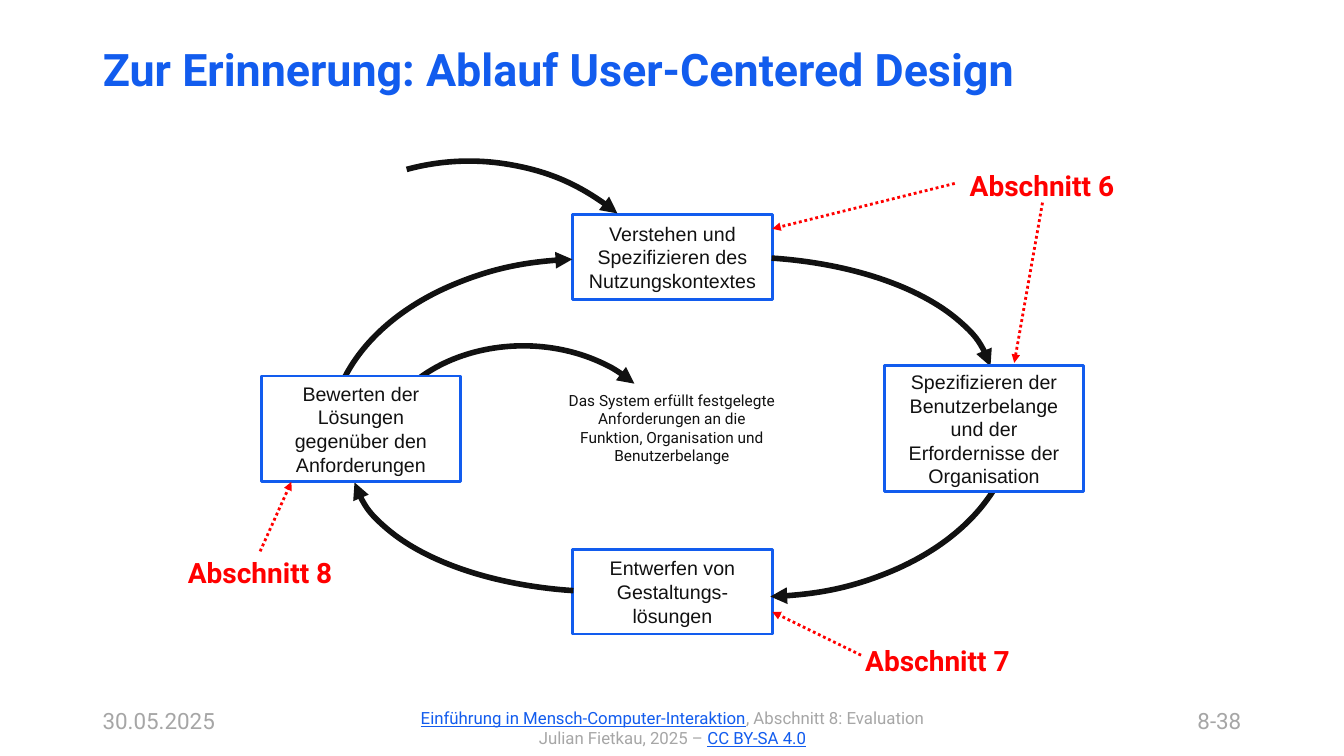
from lxml import etree
from pptx import Presentation
from pptx.dml.color import RGBColor
from pptx.enum.dml import MSO_LINE
from pptx.enum.shapes import MSO_CONNECTOR, MSO_SHAPE
from pptx.enum.text import MSO_ANCHOR, PP_ALIGN
from pptx.oxml.ns import qn
from pptx.util import Inches, Pt

LEFT, CENTER, RIGHT = PP_ALIGN.LEFT, PP_ALIGN.CENTER, PP_ALIGN.RIGHT
TOP, MIDDLE = MSO_ANCHOR.TOP, MSO_ANCHOR.MIDDLE
RECTANGLE, ARC = MSO_SHAPE.RECTANGLE, MSO_SHAPE.ARC
STRAIGHT = MSO_CONNECTOR.STRAIGHT
DOTTED = MSO_LINE.ROUND_DOT
TITLE_ONLY = 5

COLORS = {
    "blue": "125CEE",
    "ink": "111111",
    "red": "FF0000",
    "gray": "A6A6A6",
    "white": "FFFFFF",
}


def color(name):
    """Return the named palette colour."""
    return RGBColor.from_string(COLORS[name])


def write_text(shape, paragraphs, size, fill="ink", font="Roboto", bold=False,
               align=LEFT, anchor=TOP, inset=None, spacing=None, after=0):
    """Write paragraphs, each a string or a list of (text, is_link) runs."""
    frame = shape.text_frame
    frame.word_wrap = True
    frame.vertical_anchor = anchor
    if inset is not None:
        frame.margin_left = frame.margin_right = Inches(inset)
        frame.margin_top = frame.margin_bottom = Inches(inset)
    for index, content in enumerate(paragraphs):
        paragraph = frame.add_paragraph() if index else frame.paragraphs[0]
        paragraph.alignment = align
        paragraph.space_after = Pt(after)
        if spacing:
            paragraph.line_spacing = spacing
        runs = [(content, False)] if isinstance(content, str) else content
        for text, is_link in runs:
            run = paragraph.add_run()
            run.text = text
            run.font.name = font
            run.font.size = Pt(size)
            run.font.bold = bold
            run.font.underline = is_link
            run.font.color.rgb = color("blue" if is_link else fill)


def add_text(slide, left, top, width, height, paragraphs, size, **text_format):
    """Add a text box with formatted paragraphs."""
    shape = slide.shapes.add_textbox(
        Inches(left), Inches(top), Inches(width), Inches(height))
    write_text(shape, paragraphs, size, **text_format)


def add_arrowhead(shape):
    """End the line of a shape or connector in a triangle."""
    outline = shape.element.spPr.find(qn("a:ln"))
    etree.SubElement(outline, qn("a:tailEnd"), type="triangle")


def add_step(slide, left, top, width, height, paragraphs):
    """Add one outlined step of the design cycle."""
    step = slide.shapes.add_shape(
        RECTANGLE, Inches(left), Inches(top), Inches(width), Inches(height))
    step.shadow.inherit = False
    step.fill.solid()
    step.fill.fore_color.rgb = color("white")
    step.line.color.rgb = color("blue")
    step.line.width = Pt(2)
    write_text(step, paragraphs, 14, font="Arial", align=CENTER, anchor=MIDDLE)


def add_arc(slide, left, top, width, height, start, end, rotation=0):
    """Add a curved arrow between two arc adjustments."""
    arc = slide.shapes.add_shape(
        ARC, Inches(left), Inches(top), Inches(width), Inches(height))
    arc.shadow.inherit = False
    arc.adjustments[0], arc.adjustments[1] = start, end
    arc.rotation = rotation
    arc.fill.background()
    arc.line.color.rgb = color("ink")
    arc.line.width = Pt(4)
    add_arrowhead(arc)


def add_dotted_arrow(slide, start, end):
    """Add a dotted red arrow between two points."""
    arrow = slide.shapes.add_connector(STRAIGHT, *map(Inches, start + end))
    arrow.line.color.rgb = color("red")
    arrow.line.width = Pt(2)
    arrow.line.dash_style = DOTTED
    add_arrowhead(arrow)
    etree.SubElement(arrow.element.spPr, qn("a:effectLst"))


def draw_title(slide, box, text):
    """Place the title placeholder in its box."""
    title = slide.shapes.title
    title.left, title.top, title.width, title.height = map(Inches, box)
    write_text(title, [text], 32, fill="blue", bold=True, anchor=MIDDLE, spacing=0.9)


def draw_cycle(slide, box):
    """Draw the four steps, the curved arrows and the exit condition."""
    left, top, width, height = box
    step_width, short_height = 1.98, 0.84
    middle = left + (width - step_width) / 2
    right = left + width - step_width

    add_step(slide, middle, top + height - short_height, step_width, short_height,
             ["Entwerfen von", "Gestaltungs-lösungen"])
    add_step(slide, middle, top + 0.53, step_width, short_height,
             ["Verstehen und", "Spezifizieren des", "Nutzungskontextes"])
    arcs = [
        (2.2, 0.95, 5.06, 2.53, 170.93, 213.53, 0),
        (0.9, 1.74, 5.06, 2.53, 170.93, 213.53, 180),
        (2.42, 0.78, 5.06, 3.54, 9.9, 52.03, 0),
        (0.68, 0.97, 5.06, 3.54, 8.43, 51.59, 180),
        (-0.29, 0, 4.68, 4.64, 56.96, 89.73, 159.9),
        (1.12, 1.83, 2.96, 2.26, 21.67, 87.35, 180),
    ]
    for x, y, *geometry in arcs:
        add_arc(slide, left + x, top + y, *geometry)
    add_step(slide, right, top + 2.03, step_width, 1.25,
             ["Spezifizieren der",
              "Benutzerbelange und der Erfordernisse der Organisation"])
    add_step(slide, left, top + 2.13, step_width, 1.05,
             ["Bewerten der", "Lösungen", "gegenüber den", "Anforderungen"])
    add_text(slide, left + 2.92, top + 2.23, 2.31, 0.84,
             ["Das System erfüllt festgelegte Anforderungen an die "
              "Funktion, Organisation und Benutzerbelange"], 11, align=CENTER)


def draw_references(slide, box):
    """Label the steps with the sections that cover them."""
    left, top, width, height = box
    labels = [
        ("Abschnitt 6", width - 1.73, 0, 1.73, 0.38, CENTER),
        ("Abschnitt 7", 6.8, height - 0.33, 1.79, 0.33, LEFT),
        ("Abschnitt 8", 0, 3.84, 1.68, 0.4, CENTER),
    ]
    for text, x, y, label_width, label_height, align in labels:
        add_text(slide, left + x, top + y, label_width, label_height, [text], 20,
                 fill="red", bold=True, align=align, inset=0.04, after=6)
    arrows = [
        (7.73, 0.19, 5.92, 0.64),
        (6.8, 4.87, 5.92, 4.44),
        (8.6, 0.38, 8.32, 1.97),
        (0.84, 3.84, 1.15, 3.15),
    ]
    for start_x, start_y, end_x, end_y in arrows:
        add_dotted_arrow(slide, (left + start_x, top + start_y),
                         (left + end_x, top + end_y))


def draw_footer(slide, box):
    """Write the date, the course credit and the page number."""
    left, top, width, height = box
    date_width, credit_width, page_width = 1.74, 8.02, 3.31
    credit = [
        [("Einführung in Mensch-Computer-Interaktion", True),
         (", Abschnitt 8: Evaluation", False)],
        [("Julian Fietkau, 2025 – ", False), ("CC BY-SA 4.0", True)],
    ]
    add_text(slide, left + date_width, top, credit_width, height, credit, 12,
             fill="gray", align=CENTER)
    add_text(slide, left, top, date_width, 0.37, ["30.05.2025"], 16, fill="gray")
    add_text(slide, left + width - page_width, top, page_width, 0.37, ["8-38"], 16,
             fill="gray", align=RIGHT)


def main():
    """Build and save the slide."""
    presentation = Presentation()
    presentation.slide_width = Inches(13.33)
    presentation.slide_height = Inches(7.5)
    slide = presentation.slides.add_slide(presentation.slide_layouts[TITLE_ONLY])
    draw_footer(slide, (0.92, 6.97, 11.49, 0.5))
    draw_title(slide, (0.92, 0.37, 11.5, 0.68),
               "Zur Erinnerung: Ablauf User-Centered Design")
    draw_cycle(slide, (2.59, 1.6, 8.16, 4.69))
    draw_references(slide, (1.74, 1.63, 9.46, 5.04))
    presentation.save("out.pptx")


if __name__ == "__main__":
    main()
